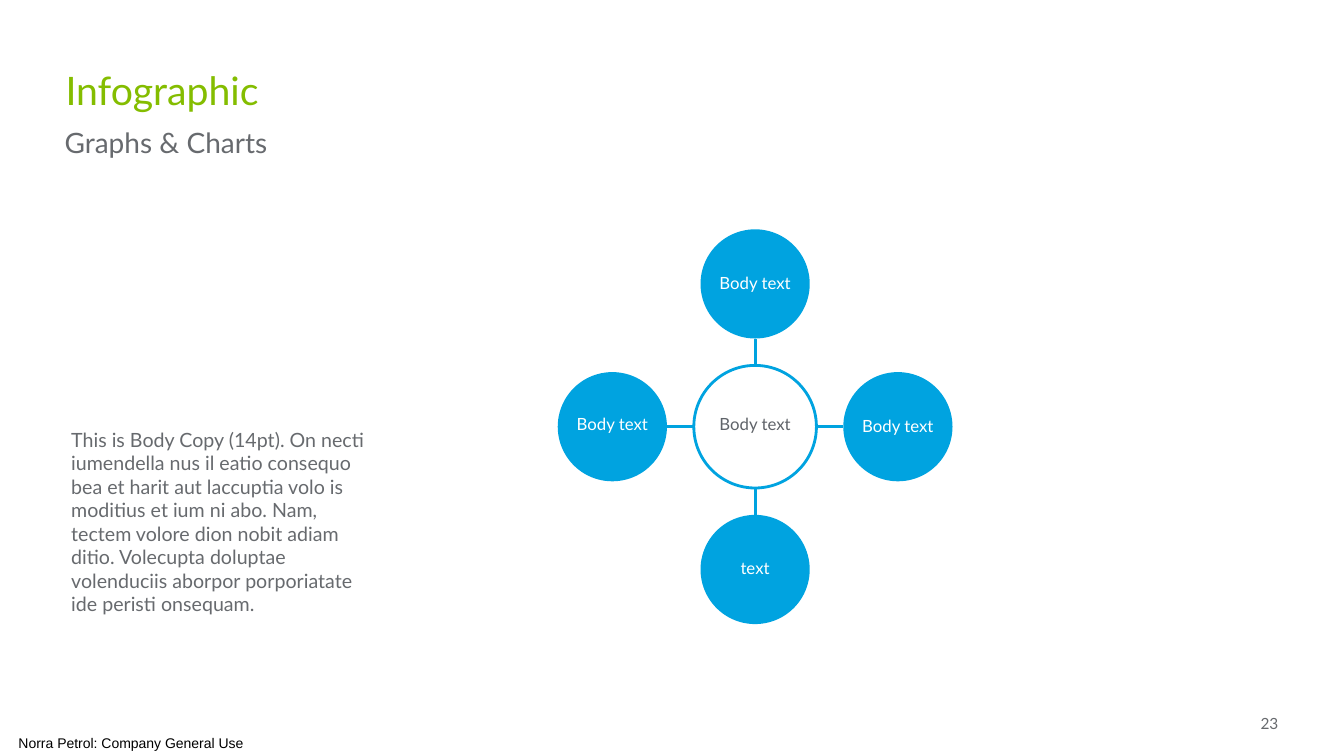
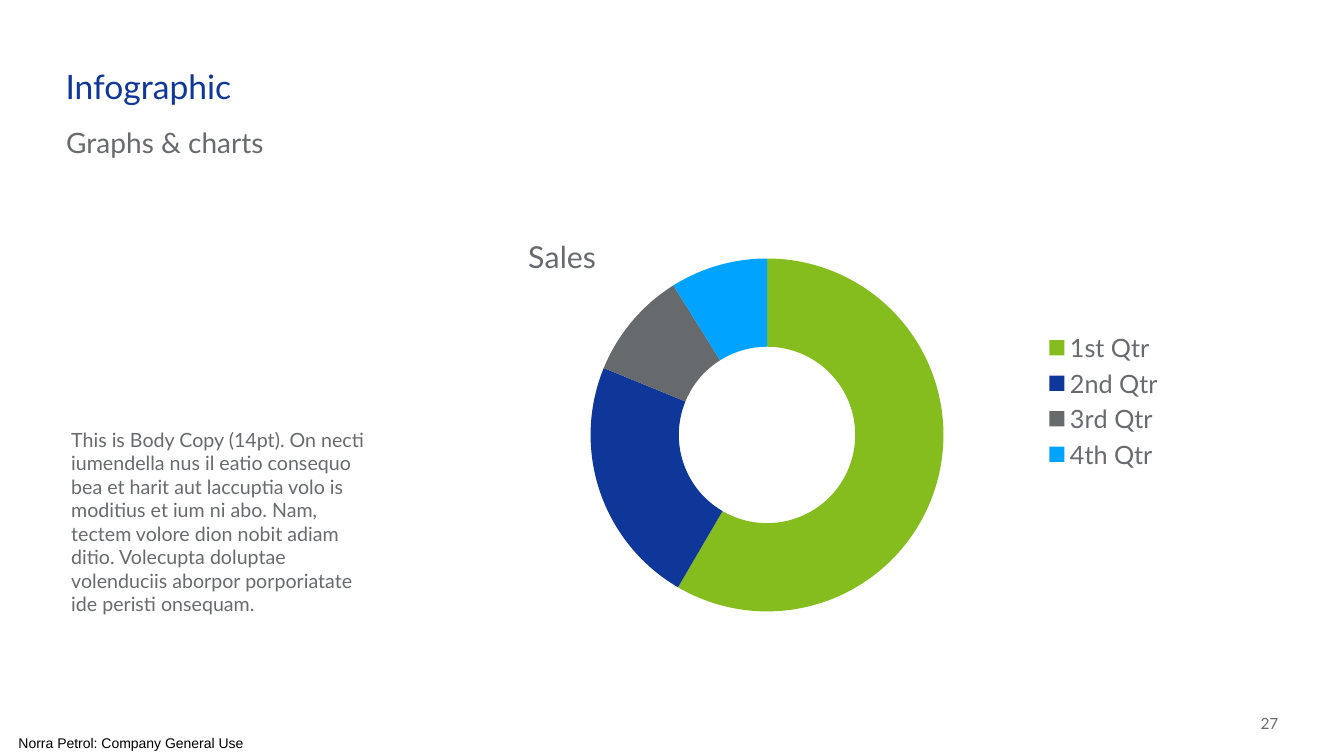
from dataclasses import dataclass
from typing import Any

from lxml.etree import SubElement
from pptx import Presentation
from pptx.chart.data import CategoryChartData
from pptx.dml.color import RGBColor
from pptx.enum.chart import XL_CHART_TYPE, XL_LEGEND_POSITION
from pptx.enum.shapes import MSO_CONNECTOR, MSO_SHAPE
from pptx.enum.text import MSO_ANCHOR, MSO_AUTO_SIZE, PP_ALIGN
from pptx.oxml.ns import qn
from pptx.util import Emu, Pt

WIDE, HIGH = Emu(12192000), Emu(6858000)
CELL = WIDE / 160  # the slide is a grid of 160 columns by 90 rows

FONT = "Lato"
GRAY, WHITE, BLACK = "676A6E", "FFFFFF", "000000"
LIME, NAVY, CYAN = "84BD00", "0F3699", "00A3E0"
SLICES = {
    "1st Qtr": (59, "84BD1D"),
    "2nd Qtr": (23, NAVY),
    "3rd Qtr": (10, "676A6C"),
    "4th Qtr": (9, "00A3FF"),
}
BODY = (
    "This is Body Copy (14pt). On necti iumendella nus il eatio consequo "
    "bea et harit aut laccuptia volo is moditius et ium ni abo. Nam, tectem "
    "volore dion nobit adiam ditio. Volecupta doluptae volenduciis aborpor "
    "porporiatate ide peristi onsequam."
)

Box = tuple[float, float, float, float]


@dataclass(frozen=True)
class Page:
    number: int
    hue: str
    size: int
    sub: str
    left: float


@dataclass(frozen=True)
class Node:
    """A ball one step from the hub, along (dx, dy)."""
    dx: int
    dy: int
    text: str
    lead: Any


HUB = (89.9, 50.8)
RING, BALL, STEP = 7.3, 6.5, 17
NODES = (
    Node(0, -1, "Body text", 0.9),
    Node(1, 0, "Body text", Pt(13)),
    Node(0, 1, "text", 0.9),
    Node(-1, 0, "Body text", Pt(10)),
)


def color(code: str) -> RGBColor:
    return RGBColor.from_string(code)


def grid(*cells: float) -> list[Emu]:
    return [Emu(round(n * CELL)) for n in cells]


def write(frame: Any, text: str, *, size: float = 14, hue: str = GRAY,
          font: str = FONT, align: Any = PP_ALIGN.LEFT,
          anchor: Any = MSO_ANCHOR.TOP, pad: tuple[float, float] = (1.2, 0.6),
          lead: Any = None) -> None:
    """Fill a text frame; pad is the side and top inset in cells."""
    frame.text = text
    frame.word_wrap = True
    frame.auto_size = MSO_AUTO_SIZE.NONE
    frame.vertical_anchor = anchor
    side, top = grid(*pad)
    frame.margin_left = frame.margin_right = side
    frame.margin_top = frame.margin_bottom = top
    para = frame.paragraphs[0]
    para.alignment = align
    para.line_spacing = lead
    face = para.runs[0].font
    face.name, face.size, face.bold = font, Pt(size), False
    face.color.rgb = color(hue)


def label(slide: Any, box: Box, text: str, **style: Any) -> None:
    write(slide.shapes.add_textbox(*grid(*box)).text_frame, text, **style)


def start(deck: Any, page: Page) -> Any:
    """Add a slide with the title, subtitle, body copy and footer."""
    slide = deck.slides.add_slide(deck.slide_layouts[5])
    title = slide.shapes.title
    title.left, title.top, title.width, title.height = grid(7.8, 7.3, 59.4, 6.8)
    write(title.text_frame, "Infographic", size=page.size, hue=page.hue,
          pad=(0, 0.6))
    label(slide, (page.left, 14.3, 59.4, 6.8), page.sub, size=20)
    label(slide, (7.3, 50.3, 37.9, 37), BODY)
    label(slide, (147.5, 84.6, 4.7, 3), str(page.number), size=11,
          align=PP_ALIGN.RIGHT, anchor=MSO_ANCHOR.MIDDLE, pad=(0, 0.6))
    label(slide, (2.2, 86.8, 32, 3.2), "Norra Petrol: Company General Use",
          size=10, hue=BLACK, font="Arial", anchor=MSO_ANCHOR.MIDDLE,
          pad=(0, 0))
    return slide


def disc(slide: Any, x: float, y: float, rad: float, text: str, *,
         fill: str, hue: str, lead: Any, edge: bool = False) -> None:
    """Draw a circle with its text, centred on (x, y)."""
    shape = slide.shapes.add_shape(
        MSO_SHAPE.OVAL, *grid(x - rad, y - rad, 2 * rad, 2 * rad))
    shape.shadow.inherit = False
    shape.fill.solid()
    shape.fill.fore_color.rgb = color(fill)
    if edge:
        shape.line.color.rgb = color(CYAN)
        shape.line.width = Pt(2)
    else:
        shape.line.fill.background()
    write(shape.text_frame, text, size=12, hue=hue, lead=lead,
          align=PP_ALIGN.CENTER, anchor=MSO_ANCHOR.MIDDLE, pad=(0.12, 0.12))


def spoke(slide: Any, node: Node) -> None:
    """Join the hub's rim to the node's rim."""
    x, y = HUB
    near, far = RING, STEP - BALL
    line = slide.shapes.add_connector(MSO_CONNECTOR.STRAIGHT, *grid(
        x + near * node.dx, y + near * node.dy,
        x + far * node.dx, y + far * node.dy))
    line.line.color.rgb = color(CYAN)
    line.line.width = Pt(2)
    SubElement(line._element.spPr, qn("a:effectLst"))


def wheel(slide: Any) -> None:
    x, y = HUB
    disc(slide, x, y, RING, "Body text", fill=WHITE, hue="5F6369",
         lead=Pt(10), edge=True)
    for node in NODES:
        spoke(slide, node)
        disc(slide, x + STEP * node.dx, y + STEP * node.dy, BALL, node.text,
             fill=CYAN, hue=WHITE, lead=node.lead)


def place(part: Any, index: int, **share: float) -> None:
    """Set a chart part's manual layout, in shares of the chart's size."""
    for old in part.findall(qn("c:layout")):
        part.remove(old)
    layout = part.makeelement(qn("c:layout"), {})
    part.insert(index, layout)
    manual = SubElement(layout, qn("c:manualLayout"))
    if "w" in share:
        SubElement(manual, qn("c:layoutTarget"), val="inner")
    for axis in "xy":
        SubElement(manual, qn(f"c:{axis}Mode"), val="edge")
    for name, value in share.items():
        SubElement(manual, qn(f"c:{name}"), val=str(value))


def ring(slide: Any) -> None:
    data = CategoryChartData()
    data.categories = list(SLICES)
    data.add_series("Sales", [value for value, _ in SLICES.values()])
    chart = slide.shapes.add_chart(
        XL_CHART_TYPE.DOUGHNUT, *grid(59, 20.8, 80.8, 53.9), data).chart
    chart.font.name, chart.font.size = FONT, Pt(18)
    chart.font.color.rgb = color(GRAY)
    chart.has_legend = True
    chart.legend.position = XL_LEGEND_POSITION.RIGHT
    chart.legend.include_in_layout = False
    chart.has_title = True
    write(chart.chart_title.text_frame, "Sales", size=21.6)
    place(chart.chart_title._element, 1, x=0.04, y=0.12)
    place(chart._chartSpace.chart.plotArea, 0, x=0.14, y=0.18, w=0.52, h=0.79)
    plot = chart.plots[0]
    plot.vary_by_categories = True
    for index, (_, hue) in enumerate(SLICES.values()):
        fill = plot.series[0].points[index].format.fill
        fill.solid()
        fill.fore_color.rgb = color(hue)


def main() -> None:
    deck = Presentation()
    deck.slide_width, deck.slide_height = WIDE, HIGH
    wheel(start(deck, Page(23, LIME, 28, "Graphs & Charts", 6.5)))
    ring(start(deck, Page(27, NAVY, 24, "Graphs & charts", 6.7)))
    deck.save("out.pptx")


if __name__ == "__main__":
    main()
